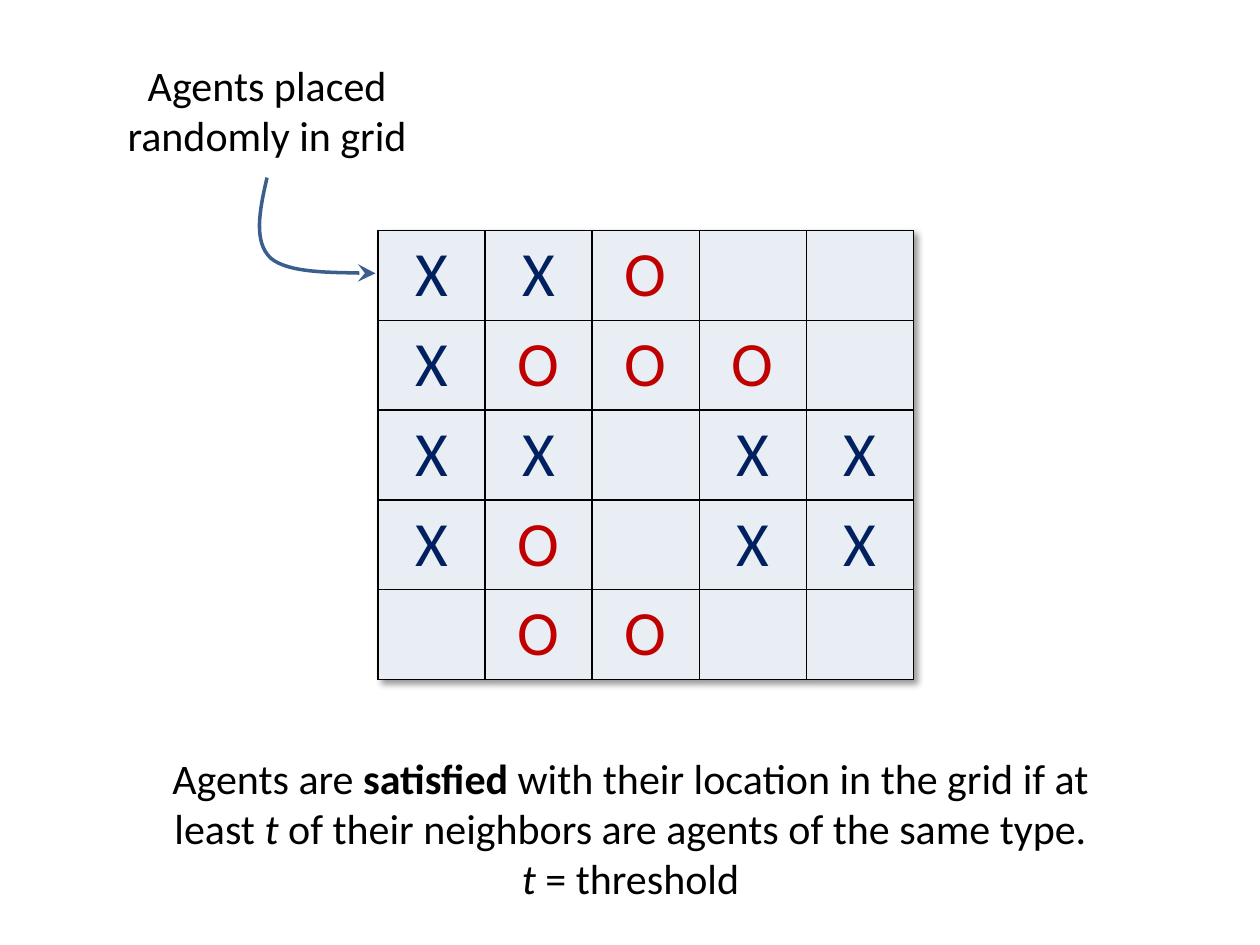
from lxml.etree import SubElement
from pptx import Presentation
from pptx.dml.color import RGBColor
from pptx.enum.text import MSO_ANCHOR, PP_ALIGN
from pptx.oxml import parse_xml
from pptx.oxml.ns import nsdecls, qn
from pptx.util import Inches, Pt

FONT = "Calibri"
BLACK = RGBColor(0x00, 0x00, 0x00)
NAVY = RGBColor(0x00, 0x20, 0x60)
RED = RGBColor(0xC0, 0x00, 0x00)
PALE = RGBColor(0xE9, 0xED, 0xF4)
STEEL = RGBColor(0x3A, 0x5F, 0x8C)
AGENT_COLORS = {"X": NAVY, "O": RED}

GRID = ["XXO  ", "XOOO ", "XX XX", "XO XX", " OO  "]
GRID_LEFT, GRID_TOP = 3, 1.83
COLUMN_WIDTH, ROW_HEIGHT = 0.85, 0.71
CURVE = [(2.12, 1.41), (2.06, 1.67), (2.01, 1.92), (2.15, 2.05),
         (2.29, 2.17), (2.98, 2.17), (2.98, 2.17)]
PLACEMENT = [[("Agents placed randomly in grid", "")]]
RULE = [
    [("Agents are ", ""), ("satisfied", "bold"),
     (" with their location in the grid if at least ", ""), ("t", "italic"),
     (" of their neighbors are agents of the same type.", "")],
    [("t", "italic"), (" = threshold", "")],
]


def style_paragraph(para, size, color):
    """Centre a paragraph and set its font."""
    para.alignment = PP_ALIGN.CENTER
    para.font.name = FONT
    para.font.size = Pt(size)
    para.font.color.rgb = color


def add_caption(page, left, top, width, height, lines):
    """Add a centred text box whose spans may be bold or italic."""
    box = page.shapes.add_textbox(*map(Inches, (left, top, width, height)))
    frame = box.text_frame
    frame.word_wrap = True
    for index, spans in enumerate(lines):
        para = frame.add_paragraph() if index else frame.paragraphs[0]
        style_paragraph(para, 24, BLACK)
        for text, emphasis in spans:
            span = para.add_run()
            span.text = text
            if emphasis:
                setattr(span.font, emphasis, True)


def add_borders(cell):
    """Draw a thin black line on all four sides of a cell."""
    properties = cell._tc.get_or_add_tcPr()
    for index, side in enumerate(("lnL", "lnR", "lnT", "lnB")):
        properties.insert(index, parse_xml(
            f'<a:{side} {nsdecls("a")} w="{Pt(1)}"><a:solidFill>'
            f'<a:srgbClr val="{BLACK}"/></a:solidFill></a:{side}>'))


def add_table_shadow(table):
    """Give the table a soft shadow to the lower right."""
    table._tbl.tblPr.insert(0, parse_xml(
        f'<a:effectLst {nsdecls("a")}><a:outerShdw blurRad="50800" '
        'dist="38100" dir="2700000" algn="tl" rotWithShape="0">'
        '<a:srgbClr val="000000"><a:alpha val="40000"/></a:srgbClr>'
        '</a:outerShdw></a:effectLst>'))


def add_agent_grid(page):
    """Add the table of agents, one letter to a cell."""
    rows, columns = len(GRID), len(GRID[0])
    table = page.shapes.add_table(
        rows, columns, Inches(GRID_LEFT), Inches(GRID_TOP),
        Inches(columns * COLUMN_WIDTH), Inches(rows * ROW_HEIGHT)).table
    table.first_row = table.horz_banding = False
    add_table_shadow(table)
    for row, agents in enumerate(GRID):
        for column, agent in enumerate(agents):
            cell = table.cell(row, column)
            cell.fill.solid()
            cell.fill.fore_color.rgb = PALE
            cell.vertical_anchor = MSO_ANCHOR.MIDDLE
            add_borders(cell)
            if agent in AGENT_COLORS:
                cell.text = agent
                style_paragraph(cell.text_frame.paragraphs[0], 36,
                                AGENT_COLORS[agent])


def add_curved_arrow(page, points):
    """Add an open Bezier curve that ends in a stealth arrowhead."""
    start, *rest = [(Inches(x), Inches(y)) for x, y in points]
    builder = page.shapes.build_freeform(*start, scale=1.0)
    builder.add_line_segments(rest, close=False)
    arrow = builder.convert_to_shape()
    arrow.shadow.inherit = False
    arrow.fill.background()
    arrow.line.color.rgb = STEEL
    arrow.line.width = Pt(2)
    SubElement(arrow.line._get_or_add_ln(), qn("a:tailEnd"), type="stealth",
               w="lg", len="lg")
    outline = next(arrow._element.iter(qn("a:path")))
    segments = outline.findall(qn("a:lnTo"))
    for first in range(0, len(segments), 3):
        curve = SubElement(outline, qn("a:cubicBezTo"))
        for segment in segments[first:first + 3]:
            curve.append(segment[0])
            outline.remove(segment)


def main():
    """Build the slide and save it."""
    deck = Presentation()
    deck.slide_width, deck.slide_height = Inches(10), Inches(7.5)
    page = deck.slides.add_slide(deck.slide_layouts[6])
    add_agent_grid(page)
    add_curved_arrow(page, CURVE)
    add_caption(page, 0.58, 0.42, 3.08, 0.91, PLACEMENT)
    add_caption(page, 0.92, 5.92, 8.17, 1.31, RULE)
    deck.save("out.pptx")


if __name__ == "__main__":
    main()
